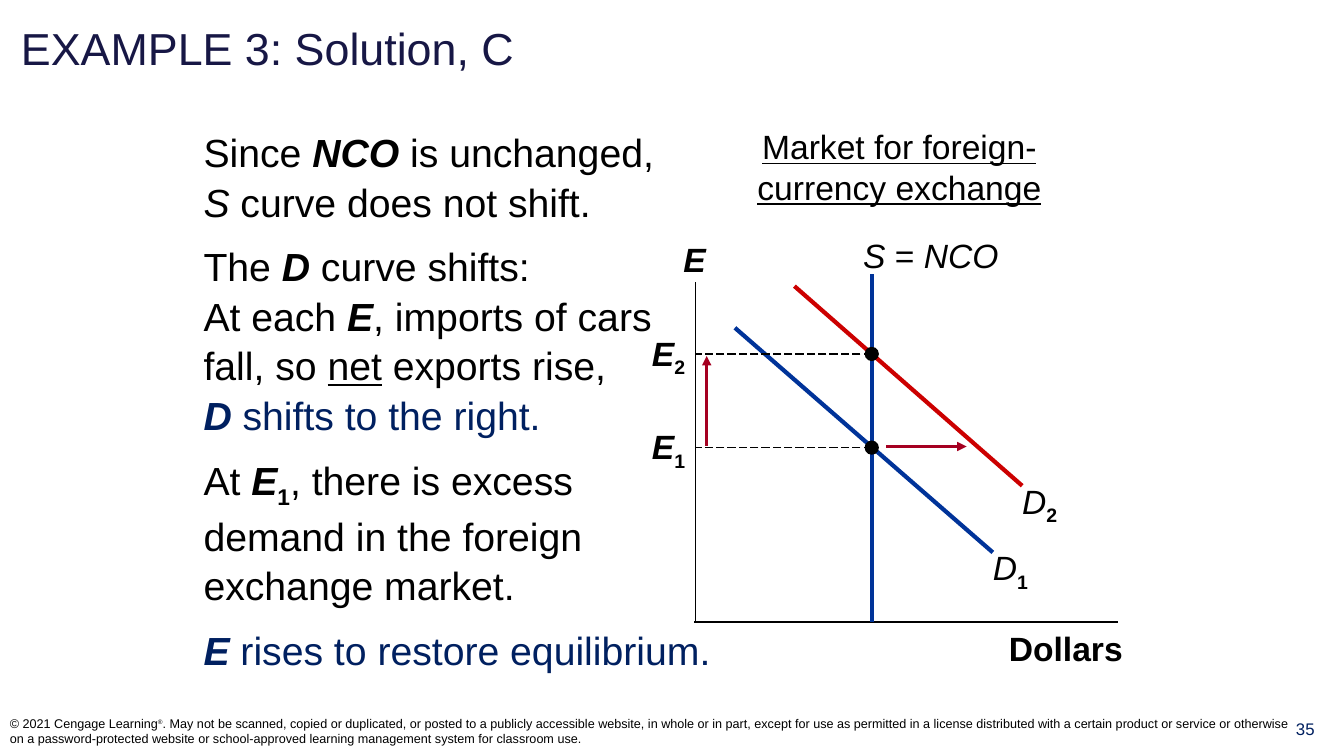
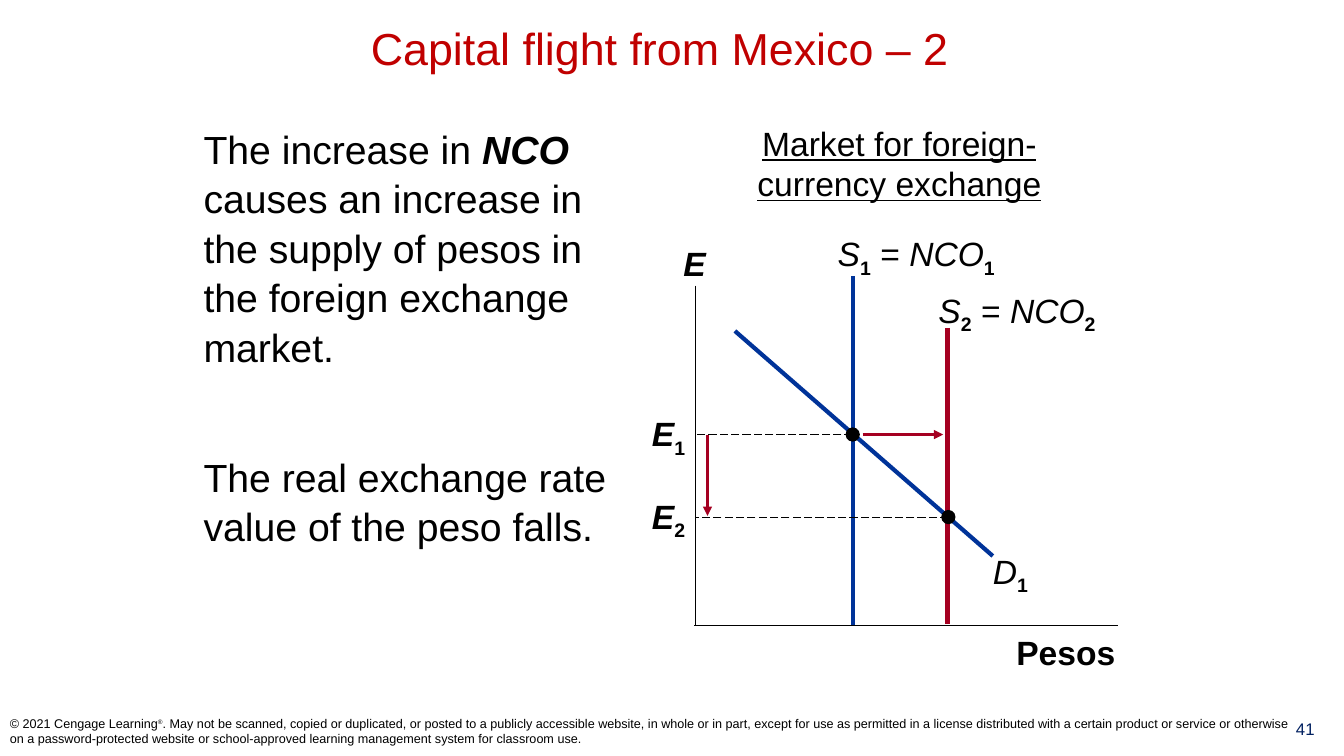
from dataclasses import dataclass
from typing import NamedTuple

from lxml.etree import SubElement
from pptx import Presentation
from pptx.dml.color import RGBColor
from pptx.enum.dml import MSO_LINE
from pptx.enum.shapes import MSO_CONNECTOR, MSO_SHAPE
from pptx.enum.text import MSO_ANCHOR, PP_ALIGN
from pptx.oxml.ns import qn
from pptx.slide import Slide
from pptx.util import Cm, Pt


@dataclass(frozen=True)
class Theme:
    font: str = "Arial"
    black: str = "000000"
    navy: str = "002060"
    ink: str = "171745"
    brick: str = "C00000"
    blue: str = "003399"
    red: str = "CC0000"
    wine: str = "A50021"
    title: float = 32
    body: float = 28
    label: float = 24
    page: float = 12
    legal: float = 9
    mark: float = 8
    axis: float = 1
    dash: float = 0.75
    arrow: float = 2.25
    curve: float = 3


T = Theme()
LEFT, CENTER = PP_ALIGN.LEFT, PP_ALIGN.CENTER


class Box(NamedTuple):
    x: float
    y: float
    w: float
    h: float


class Point(NamedTuple):
    x: float
    y: float


class Run(NamedTuple):
    """Style letters: b bold, i italic, u underline, - subscript, + superscript."""
    text: str
    style: str = ""
    color: str = T.black
    size: float = 0


class Para(NamedTuple):
    runs: list[Run]
    before: float = 0


class Curve(NamedTuple):
    name: str
    start: Point
    end: Point
    color: str


class Supply(NamedTuple):
    runs: list[Run]
    mid: float
    top: float
    start: Point
    foot: float
    color: str


class Level(NamedTuple):
    name: str
    dot: Point


class Arrow(NamedTuple):
    start: Point
    end: Point


class Graph(NamedTuple):
    unit: str
    drop: float
    curves: list[Curve]
    supply: list[Supply]
    levels: list[Level]
    arrows: list[Arrow]


class Page(NamedTuple):
    title: Run
    align: PP_ALIGN
    number: str
    body: Box
    paras: list[Para]
    graph: Graph


MARGINS = (0.25, 0.13)
AXIS_X = 17.53
BASE = 15.67

LEGAL = [
    Run("© 2021 Cengage Learning"),
    Run("®", "+", size=T.mark),
    Run(". May not be scanned, copied or duplicated, or posted to a publicly "
        "accessible website, in whole or in part, except for use as permitted in a "
        "license distributed with a certain product or service or otherwise on a "
        "password-protected website or school-approved learning management system "
        "for classroom use."),
]


def write(slide: Slide, box: Box, paras: list[Para], size: float,
          align: PP_ALIGN = LEFT, pitch: float = 1,
          pad: tuple[float, float] = (0, 0),
          anchor: MSO_ANCHOR = MSO_ANCHOR.TOP) -> None:
    frame = slide.shapes.add_textbox(*map(Cm, box)).text_frame
    frame.word_wrap = True
    frame.vertical_anchor = anchor
    frame.margin_left = frame.margin_right = Cm(pad[0])
    frame.margin_top = frame.margin_bottom = Cm(pad[1])
    for i, para in enumerate(paras):
        p = frame.add_paragraph() if i else frame.paragraphs[0]
        p.alignment = align
        p.line_spacing = pitch
        p.space_before = Pt(para.before)
        for part in para.runs:
            if part.text == "\n":
                p.add_line_break()
                continue
            run = p.add_run()
            run.text = part.text
            font = run.font
            font.name = T.font
            font.size = Pt(part.size or size)
            font.color.rgb = RGBColor.from_string(part.color)
            font.bold = "b" in part.style
            font.italic = "i" in part.style
            font.underline = "u" in part.style
            for sign, shift in (("-", "-25000"), ("+", "30000")):
                if sign in part.style:
                    run._r.get_or_add_rPr().set("baseline", shift)


def label(slide: Slide, box: Box, runs: list[Run], align: PP_ALIGN = CENTER,
          pitch: float = 1) -> None:
    write(slide, box, [Para(runs)], T.label, align, pitch)


def line(slide: Slide, start: Point, end: Point, color: str, width: float,
         dashed: bool = False, head: bool = False) -> None:
    link = slide.shapes.add_connector(MSO_CONNECTOR.STRAIGHT,
                                      *map(Cm, (*start, *end)))
    link.line.color.rgb = RGBColor.from_string(color)
    link.line.width = Pt(width)
    if dashed:
        link.line.dash_style = MSO_LINE.LONG_DASH
    if head:
        SubElement(link.line._get_or_add_ln(), qn("a:tailEnd"), type="triangle")
    SubElement(link._element.spPr, qn("a:effectLst"))


def dot(slide: Slide, at: Point, size: float = 0.36) -> None:
    disc = slide.shapes.add_shape(
        MSO_SHAPE.OVAL, Cm(at.x - size / 2), Cm(at.y - size / 2), Cm(size), Cm(size))
    disc.shadow.inherit = False
    disc.fill.solid()
    disc.fill.fore_color.rgb = RGBColor.from_string(T.black)
    disc.line.fill.background()


def axes(slide: Slide, unit: str, drop: float) -> None:
    base = BASE + drop
    line(slide, Point(AXIS_X, 7.11 + drop), Point(AXIS_X, base), T.black, T.axis)
    line(slide, Point(AXIS_X - 0.03, base), Point(28.17, base), T.black, T.axis)
    label(slide, Box(16.92, 6.02 + drop, 1.17, 1.02), [Run("E", "bi")])
    label(slide, Box(25.27, base + 0.16, 3.18, 1.02), [Run(unit, "b")])


def plot(slide: Slide, graph: Graph) -> None:
    axes(slide, graph.unit, graph.drop)
    for s in graph.supply:
        label(slide, Box(s.mid - 2.31, s.top, 4.62, 1), s.runs, pitch=1.05)
        line(slide, s.start, Point(s.start.x, s.foot), s.color, T.curve)
    for c in graph.curves:
        line(slide, c.start, c.end, c.color, T.curve)
        label(slide, Box(c.end.x, c.end.y - 0.19, 1.27, 1.12),
              [Run("D", "i"), Run(c.name, "b-")], LEFT, 1.05)
    for name, at in graph.levels:
        line(slide, at, Point(AXIS_X, at.y), T.black, T.dash, dashed=True)
        label(slide, Box(16.28, at.y - 0.54, 1.14, 1.02),
              [Run("E", "bi"), Run(name, "b-")])
        dot(slide, at)
    for a in graph.arrows:
        line(slide, a.start, a.end, T.wine, T.arrow, head=True)


def build(slide: Slide, page: Page) -> None:
    write(slide, Box(0.28, 0.28, 33.02, 1.83), [Para([page.title])], T.title,
          page.align, pad=MARGINS, anchor=MSO_ANCHOR.MIDDLE)
    write(slide, Box(31.93, 17.98, 1.93, 1.04),
          [Para([Run(page.number, color=T.navy)])], T.page, CENTER, pad=MARGINS)
    write(slide, page.body, page.paras, T.body, pitch=1.05, pad=MARGINS)
    label(slide, Box(18.78, page.body.y + 0.13, 7.77, 2.05),
          [Run("Market for foreign-currency exchange", "u")])
    plot(slide, page.graph)
    write(slide, Box(0, 17.78, 33.02, 1.27), [Para(LEGAL)], T.legal,
          pad=MARGINS, anchor=MSO_ANCHOR.MIDDLE)


def flow(name: str) -> list[Run]:
    return [Run("S", "i"), Run(name, "b-"), Run(" = "),
            Run("NCO", "i"), Run(name, "b-")]


BREAK = Run("\n")
GAP = 11

PAGES = [
    Page(
        Run("EXAMPLE 3: Solution, C", color=T.ink), LEFT, "35",
        Box(4.88, 3.05, 13.64, 15.37),
        [
            Para([Run("Since "), Run("NCO", "bi"), Run(" is unchanged,"), BREAK,
                  Run("S", "i"), Run(" curve does not shift.")]),
            Para([Run("The "), Run("D", "bi"), Run(" curve shifts:"), BREAK,
                  Run("At each "), Run("E", "bi"), Run(", imports of cars"), BREAK,
                  Run("fall, so "), Run("net", "u"), Run(" exports rise,"), BREAK,
                  Run("D", "bi", T.navy),
                  Run(" shifts to the right.", color=T.navy)], GAP),
            Para([Run("At "), Run("E", "bi"), Run("1", "b-"),
                  Run(", there is excess"), BREAK,
                  Run("demand in the foreign"), BREAK,
                  Run("exchange market.")], GAP),
            Para([Run("E", "bi", T.navy),
                  Run(" rises to restore equilibrium.", color=T.navy)], GAP),
        ],
        Graph(
            "Dollars", 0,
            [Curve("1", Point(18.52, 8.26), Point(25.02, 13.92), T.blue),
             Curve("2", Point(20.02, 7.21), Point(25.76, 12.24), T.red)],
            [Supply([Run("S", "i"), Run(" = "), Run("NCO", "i")], 23.46, 5.87,
                    Point(21.97, 6.91), BASE, T.blue)],
            [Level("1", Point(21.97, 11.28)), Level("2", Point(21.97, 8.92))],
            [Arrow(Point(22.33, 11.25), Point(24.36, 11.25)),
             Arrow(Point(17.81, 11.23), Point(17.81, 8.97))],
        ),
    ),
    Page(
        Run("Capital flight from Mexico – 2 ", color=T.brick), CENTER, "41",
        Box(4.88, 2.97, 11.4, 14.6),
        [
            Para([Run("The increase in "), Run("NCO", "bi"),
                  Run(" causes an increase in the supply of pesos in the foreign "
                      "exchange market.")]),
            Para([Run("The real exchange rate value of the peso falls.")], 57.5),
        ],
        Graph(
            "Pesos", 0.09,
            [Curve("1", Point(18.52, 8.34), Point(25.02, 14.01), T.blue)],
            [Supply(flow("1"), 23.09, 5.82, Point(21.49, 6.96), 15.75, T.blue),
             Supply(flow("2"), 25.63, 7.24, Point(23.88, 8.26), 15.72, T.wine)],
            [Level("1", Point(21.49, 10.95)), Level("2", Point(23.9, 13.03))],
            [Arrow(Point(21.74, 10.95), Point(23.77, 10.95)),
             Arrow(Point(17.83, 10.97), Point(17.83, 13))],
        ),
    ),
]


def main() -> None:
    deck = Presentation()
    deck.slide_width, deck.slide_height = Cm(33.87), Cm(19.05)
    for page in PAGES:
        build(deck.slides.add_slide(deck.slide_layouts[6]), page)
    deck.save("out.pptx")


if __name__ == "__main__":
    main()
